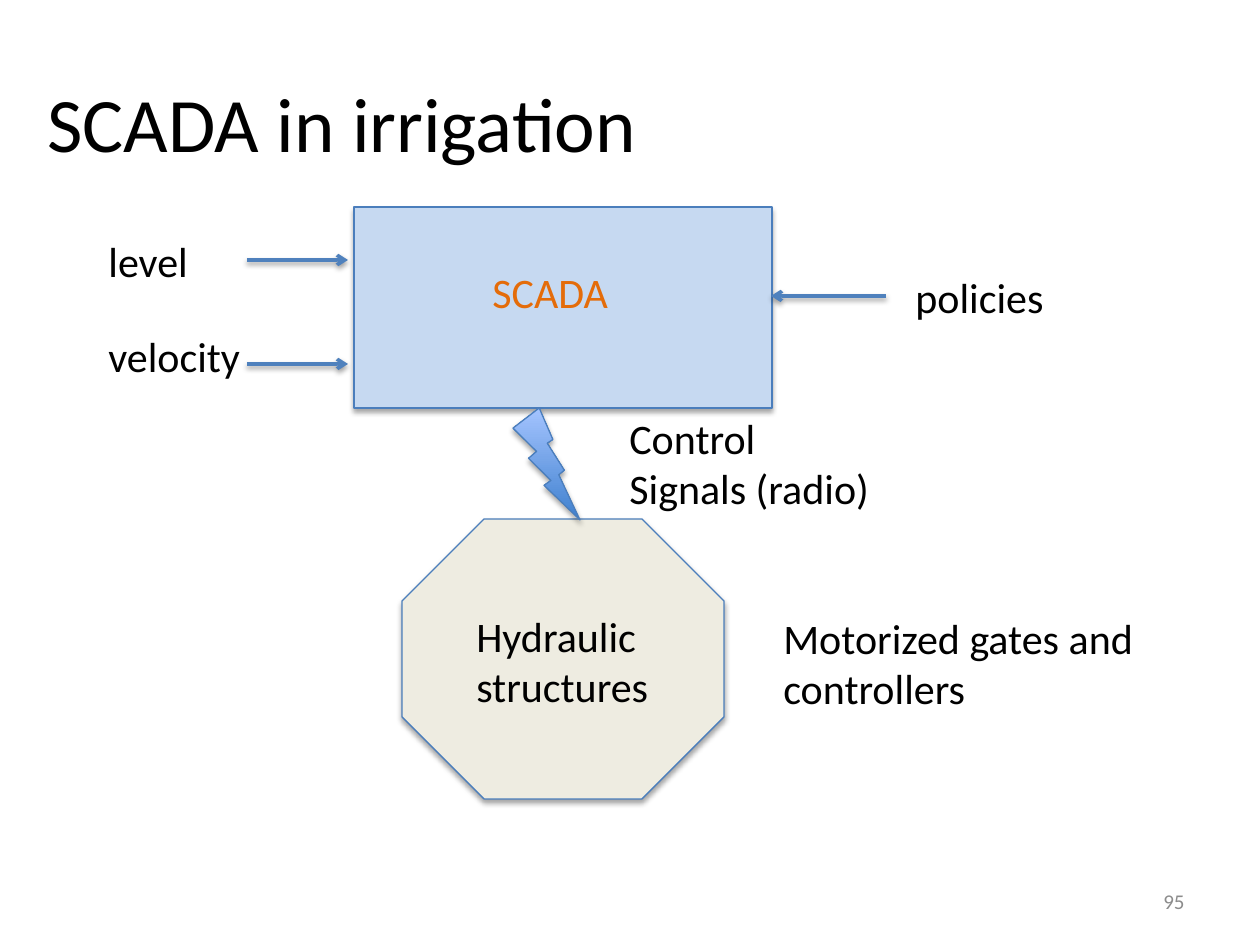
"""Build the SCADA in irrigation slide."""
from lxml import etree
from pptx import Presentation, util as u
from pptx.dml.color import RGBColor
from pptx.enum import shapes, text
from pptx.oxml import ns

THEME = {
    "font": "Calibri", "ink": "000000", "accent": "E46C0A", "grey": "8C8C8C",
    "edge": "4B7EBC", "arrow": "4F81BD", "box": "C6D9F1", "stone": "EEECE1",
    "bolt": ("3F80CE", "A4C4FF"),
    "title": 44, "body": 24, "small": 12, "thin": 0.75, "thick": 2,
}
PX = u.Inches(1) // 126
SIZE = (1260, 945)

TITLE = ("SCADA in irrigation", (35, 43, 1134, 157))
NUMBER = ("95", (903, 876, 294, 50))
KIND = shapes.MSO_SHAPE
BLOCKS = [
    (KIND.RECTANGLE, (354, 207, 418, 201), THEME["box"]),
    (KIND.OCTAGON, (402, 519, 322, 280), THEME["stone"]),
    (KIND.LIGHTNING_BOLT, (513, 408, 67, 112), THEME["bolt"]),
]
ARROWS = [(247, 348, 260), (247, 348, 364), (886, 771, 296)]
LABELS = [
    (["SCADA"], (480, 260, 142, 63), "accent"),
    (["level"], (96, 229, 106, 63), "ink"),
    (["velocity"], (96, 324, 160, 63), "ink"),
    (["policies"], (903, 265, 155, 63), "ink"),
    (["Control", "Signals (radio)"], (617, 406, 268, 115), "ink"),
    (["Hydraulic", "structures"], (464, 604, 200, 115), "ink"),
    (["Motorized gates and", "controllers"], (771, 606, 382, 115), "ink"),
]


def emu(box):
    return [n * PX for n in box]


def tint(code):
    return RGBColor.from_string(code)


def shade(item, alpha, dist):
    props = item._element.spPr
    for old in props.findall(ns.qn("a:effectLst")):
        props.remove(old)
    glow = etree.SubElement(props, ns.qn("a:effectLst"))
    drop = etree.SubElement(
        glow, ns.qn("a:outerShdw"), blurRad=str(u.Pt(3.1)),
        dist=str(u.Pt(dist)), dir="5400000", rotWithShape="0")
    ink = etree.SubElement(drop, ns.qn("a:srgbClr"), val="000000")
    etree.SubElement(ink, ns.qn("a:alpha"), val=str(alpha * 1000))


def write(frame, lines, size, color, align=text.PP_ALIGN.LEFT):
    for i, line in enumerate(lines):
        para = frame.paragraphs[0] if i == 0 else frame.add_paragraph()
        para.alignment = align
        run = para.add_run()
        run.text = line
        run.font.name = THEME["font"]
        run.font.size = u.Pt(THEME[size])
        run.font.color.rgb = tint(THEME[color])


def label(slide, lines, box, size, color, **style):
    frame = slide.shapes.add_textbox(*emu(box)).text_frame
    frame.word_wrap = False
    write(frame, lines, size, color, **style)
    return frame


def block(slide, kind, box, fill):
    item = slide.shapes.add_shape(kind, *emu(box))
    if isinstance(fill, tuple):
        item.fill.gradient()
        item.fill.gradient_angle = 90
        for i, stop in enumerate(item.fill.gradient_stops):
            stop.position = i
            stop.color.rgb = tint(fill[i])
    else:
        item.fill.solid()
        item.fill.fore_color.rgb = tint(fill)
    item.line.color.rgb = tint(THEME["edge"])
    item.line.width = u.Pt(THEME["thin"])
    shade(item, 35, 1.8)


def arrow(slide, start, end, y):
    line = slide.shapes.add_connector(
        shapes.MSO_CONNECTOR.STRAIGHT, *emu((start, y, end, y)))
    line.line.color.rgb = tint(THEME["arrow"])
    line.line.width = u.Pt(THEME["thick"])
    etree.SubElement(line.line._get_or_add_ln(), ns.qn("a:tailEnd"), type="arrow")
    shade(line, 38, 1.6)


def main():
    deck = Presentation()
    deck.slide_width, deck.slide_height = emu(SIZE)
    slide = deck.slides.add_slide(deck.slide_layouts[5])

    words, box = TITLE
    head = slide.shapes.title
    head.left, head.top, head.width, head.height = emu(box)
    head.text_frame.vertical_anchor = text.MSO_ANCHOR.MIDDLE
    write(head.text_frame, [words], "title", "ink")

    for item in BLOCKS:
        block(slide, *item)
    for item in ARROWS:
        arrow(slide, *item)
    for lines, box, color in LABELS:
        label(slide, lines, box, "body", color)

    words, box = NUMBER
    frame = label(slide, [words], box, "small", "grey", align=text.PP_ALIGN.RIGHT)
    frame.word_wrap = True
    frame.vertical_anchor = text.MSO_ANCHOR.MIDDLE
    deck.save("out.pptx")


if __name__ == "__main__":
    main()
